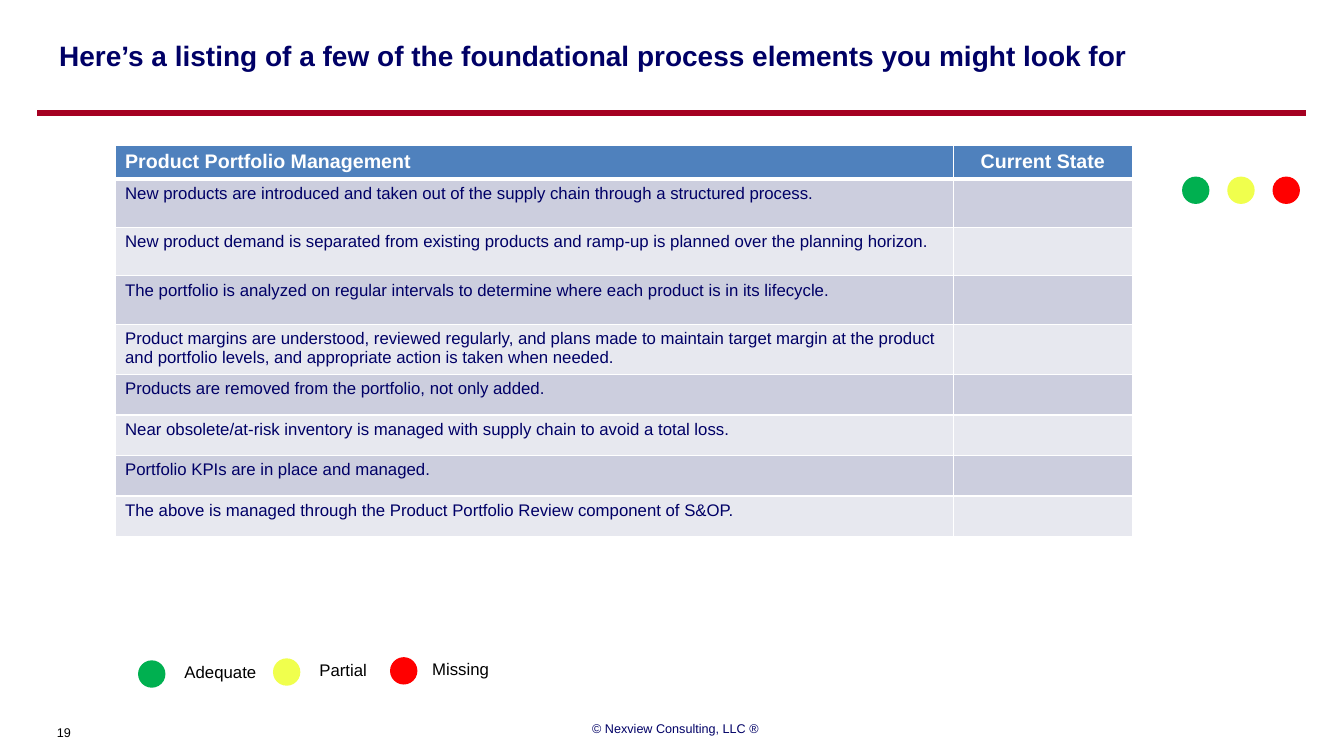
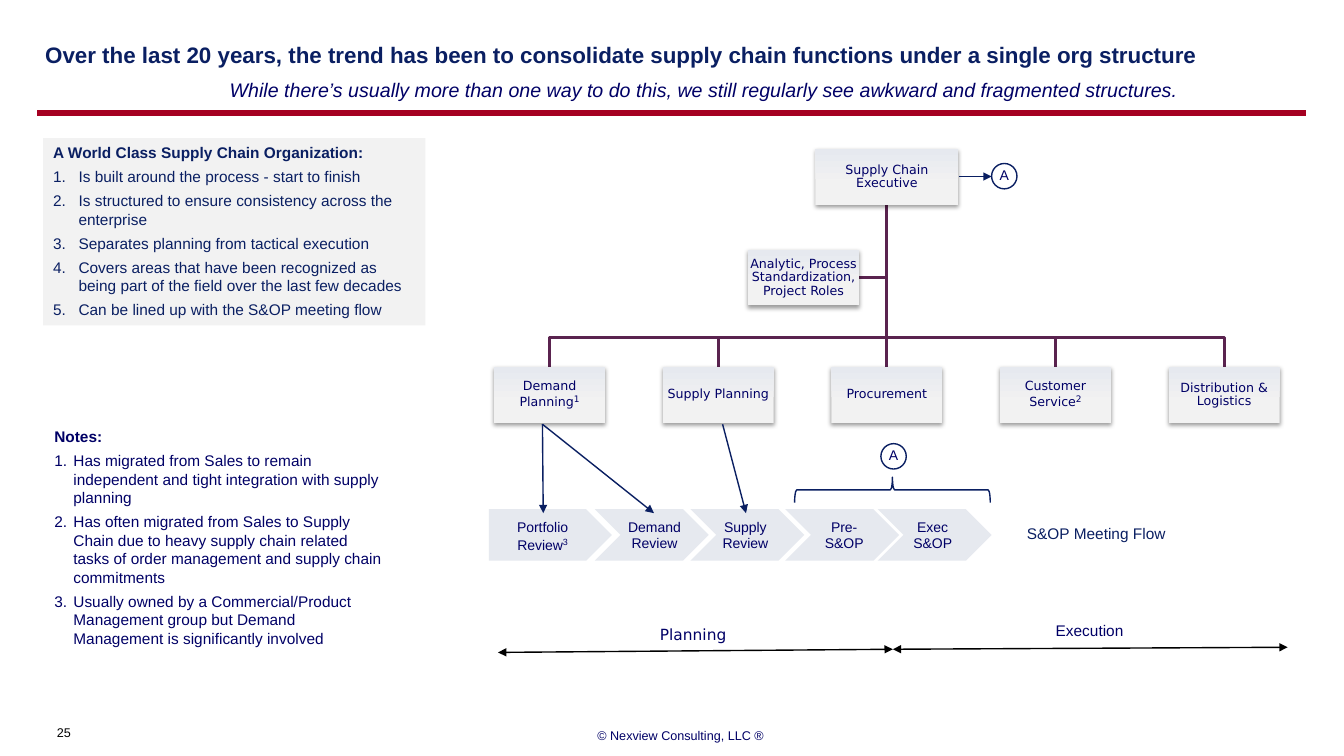
from dataclasses import dataclass

from lxml.etree import SubElement
from pptx import Presentation
from pptx.dml.color import RGBColor
from pptx.enum.shapes import MSO_CONNECTOR, MSO_SHAPE
from pptx.enum.text import MSO_ANCHOR, PP_ALIGN
from pptx.oxml.ns import qn
from pptx.util import Cm, Pt

COLORS = {
    "navy": "000066", "ink": "0A1F62", "black": "000000", "white": "FFFFFF",
    "crimson": "A50021", "plum": "5A234F", "header": "4F81BD",
    "band_dark": "CCCEDE", "band_light": "E7E8EF", "panel": "F2F2F2", "mist": "E6E9EF",
    "adequate": "00B050", "partial": "F0FF4D", "missing": "FF0000",
}
SANS = "DejaVu Sans"
BASE_FONT = {"name": "Arial", "bold": False, "italic": False}
STYLES = {
    "title": ("navy", {"size": Pt(20), "bold": True}),
    "long_title": ("ink", {"size": Pt(16), "bold": True}),
    "subtitle": ("navy", {"size": Pt(14), "italic": True}),
    "footer": ("navy", {"size": Pt(9)}),
    "page": ("black", {"size": Pt(9)}),
    "table_head": ("white", {"size": Pt(14), "bold": True}),
    "table_body": ("navy", {"size": Pt(12)}),
    "legend": ("black", {"size": Pt(12)}),
    "role": ("navy", {"size": Pt(9), "name": SANS}),
    "step": ("navy", {"size": Pt(10)}),
    "planning": ("navy", {"size": Pt(11), "name": SANS}),
    "notes": ("navy", {"size": Pt(11)}),
    "notes_head": ("navy", {"size": Pt(11), "bold": True}),
    "panel": ("ink", {"size": Pt(11)}),
    "panel_head": ("ink", {"size": Pt(11), "bold": True}),
}
DOT = 0.69
CENTER = PP_ALIGN.CENTER


@dataclass
class Box:
    """A rectangle in centimetres."""
    x: float
    y: float
    w: float
    h: float

    def inner(self, dx, dy, w, h):
        return Box(self.x + dx, self.y + dy, w, h)

    def point(self, dx, dy):
        return self.x + dx, self.y + dy

    def lengths(self):
        return Cm(self.x), Cm(self.y), Cm(self.w), Cm(self.h)


# Shared helpers
def rgb(color):
    return RGBColor.from_string(COLORS[color])


def apply(target, values):
    for name, value in values.items():
        setattr(target, name, value)


def write(paragraph, text, style, **layout):
    """Fill a paragraph; what follows ^ is superscript."""
    color, font = STYLES[style]
    apply(paragraph, layout)
    body, _, mark = text.partition("^")
    for part, raised in ((body, False), (mark, True)):
        if part:
            run = paragraph.add_run()
            run.text = part
            apply(run.font, {**BASE_FONT, **font})
            run.font.color.rgb = rgb(color)
            if raised:
                run.font.size = Pt(11)
                run.font._element.set("baseline", "30000")


def set_frame(frame, anchor=MSO_ANCHOR.TOP, inset=None):
    apply(frame, {"word_wrap": True, "vertical_anchor": anchor})
    if inset is not None:
        sides = ("left", "right", "top", "bottom")
        apply(frame, {f"margin_{side}": Cm(inset) for side in sides})


def add_text(slide, box, text, style, anchor=MSO_ANCHOR.TOP, inset=None, **layout):
    frame = slide.shapes.add_textbox(*box.lengths()).text_frame
    set_frame(frame, anchor, inset)
    for i, line in enumerate(text.split("\n")):
        paragraph = frame.add_paragraph() if i else frame.paragraphs[0]
        write(paragraph, line, style, **layout)


def add_figure(slide, kind, box, fill=None, line=None):
    figure = slide.shapes.add_shape(kind, *box.lengths())
    figure.shadow.inherit = False
    if fill:
        figure.fill.solid()
        figure.fill.fore_color.rgb = rgb(fill)
    else:
        figure.fill.background()
    if line:
        figure.line.color.rgb = rgb(line)
        figure.line.width = Pt(1)
    else:
        figure.line.fill.background()
    return figure


def add_line(slide, start, end, color, width=1, heads=()):
    ends = (Cm(value) for value in (*start, *end))
    line = slide.shapes.add_connector(MSO_CONNECTOR.STRAIGHT, *ends)
    line.line.color.rgb = rgb(color)
    line.line.width = Pt(width)
    properties = line._element.spPr
    for head in heads:
        SubElement(properties.find(qn("a:ln")), qn(f"a:{head}"), type="triangle")
    SubElement(properties, qn("a:effectLst"))


def add_dot(slide, x, y, state):
    add_figure(slide, MSO_SHAPE.OVAL, Box(x, y, DOT, DOT), state)


def add_numbered(frame, heading, items, style, indent):
    set_frame(frame)
    write(frame.paragraphs[0], heading, f"{style}_head", alignment=PP_ALIGN.LEFT)
    for item in items:
        paragraph = frame.add_paragraph()
        properties = paragraph._p.get_or_add_pPr()
        properties.set("marL", str(Cm(indent)))
        properties.set("indent", str(-Cm(indent)))
        SubElement(properties, qn("a:buAutoNum"), type="arabicPeriod")
        write(paragraph, item, style, alignment=PP_ALIGN.LEFT, space_before=Pt(4))


def start_slide(deck, title, style, title_box, page, footer_x, footer_anchor):
    slide = deck.slides.add_slide(deck.slide_layouts[6])
    add_line(slide, (0.94, 2.84), (32.92, 2.84), "crimson", 4)
    add_text(slide, Box(0.91, 18.19, 1.4, 0.61), page, "page", alignment=CENTER, line_spacing=0.9)
    add_text(slide, title_box, title, style, MSO_ANCHOR.MIDDLE)
    add_text(slide, Box(footer_x, 18.03, 10.72, 1.02), "© Nexview Consulting, LLC ®",
             "footer", footer_anchor, alignment=CENTER)
    return slide


# Process checklist slide
PRACTICES = [
    "New products are introduced and taken out of the supply chain through a structured process.",
    "New product demand is separated from existing products and ramp-up is planned over the planning horizon.",
    "The portfolio is analyzed on regular intervals to determine where each product is in its lifecycle.",
    "Product margins are understood, reviewed regularly, and plans made to maintain target margin at the "
    "product and portfolio levels, and appropriate action is taken when needed.",
    "Products are removed from the portfolio, not only added.",
    "Near obsolete/at-risk inventory is managed with supply chain to avoid a total loss.",
    "Portfolio KPIs are in place and managed.",
    "The above is managed through the Product Portfolio Review component of S&OP.",
]


def style_cell(cell, fill, top, bottom):
    cell.fill.solid()
    cell.fill.fore_color.rgb = rgb(fill)
    properties = cell._tc.get_or_add_tcPr()
    widths = {"lnL": 1, "lnR": 1, "lnT": top, "lnB": bottom}
    for i, (side, width) in enumerate(widths.items()):
        border = SubElement(properties, qn(f"a:{side}"), w=str(Pt(width)))
        SubElement(SubElement(border, qn("a:solidFill")), qn("a:srgbClr"), val=COLORS["white"])
        properties.insert(i, border)


def checklist(slide, box):
    table = slide.shapes.add_table(len(PRACTICES) + 1, 2, *box.lengths()).table
    state_width = 4.5
    for column, width in zip(table.columns, (box.w - state_width, state_width)):
        column.width = Cm(width)
    for i, row in enumerate(table.rows):
        row.height = Cm(0.82 if i == 0 else 1.22 if i < 5 else 1.02)
        fill = "header" if i == 0 else "band_dark" if i % 2 else "band_light"
        for cell in row.cells:
            style_cell(cell, fill, 3 if i == 1 else 1, 3 if i == 0 else 1)
    write(table.cell(0, 0).text_frame.paragraphs[0], "Product Portfolio Management", "table_head")
    write(table.cell(0, 1).text_frame.paragraphs[0], "Current State", "table_head", alignment=CENTER)
    for i, practice in enumerate(PRACTICES, 1):
        write(table.cell(i, 0).text_frame.paragraphs[0], practice, "table_body")


def legend(slide, box):
    items = [("Adequate", 0, 0.16, 0.92), ("Partial", 3.4, 0.11, 0.92), ("Missing", 6.35, 0.08, 0.81)]
    for label, dx, dy, gap in items:
        add_dot(slide, *box.point(dx, dy), label.lower())
        add_text(slide, box.inner(dx + gap, dy - 0.08, 2.62, 0.76), label, "legend")


def state_dots(slide, box):
    for i, state in enumerate(("adequate", "partial", "missing")):
        add_dot(slide, *box.point(i * (box.w - DOT) / 2, 0), state)


def checklist_slide(deck):
    slide = start_slide(deck, "Here’s a listing of a few of the foundational process elements you might look for",
                        "title", Box(1.24, 0.66, 31.67, 1.47), "19", 11.66, MSO_ANCHOR.TOP)
    checklist(slide, Box(2.9, 3.66, 25.63, 9.78))
    legend(slide, Box(3.48, 16.48, 10.67, 0.85))
    state_dots(slide, Box(29.79, 4.45, 2.97, DOT))


# Organization slide
FUNCTIONS = ["Demand Planning^1", "Supply Planning", "Procurement", "Customer Service^2", "Distribution & Logistics"]
# Each step: text, offset of its arrow, offset of its label
STEPS = [("Portfolio\nReview^3", 0, 0.3), ("Demand\nReview", 2.67, 3.12), ("Supply\nReview", 5.08, 5.41),
         ("Pre-S&OP", 7.47, 7.9), ("Exec S&OP", 9.8, 10.13)]
TRAITS = [
    "Is built around the process - start to finish",
    "Is structured to ensure consistency across the enterprise",
    "Separates planning from tactical execution",
    "Covers areas that have been recognized as being part of the field over the last few decades",
    "Can be lined up with the S&OP meeting flow",
]
NOTES = [
    "Has migrated from Sales to remain independent and tight integration with supply planning",
    "Has often migrated from Sales to Supply Chain due to heavy supply chain related tasks of order "
    "management and supply chain commitments",
    "Usually owned by a Commercial/Product Management group but Demand Management is significantly involved",
]


def role(slide, box, text):
    card = add_figure(slide, MSO_SHAPE.RECTANGLE, box, "panel")
    card.fill.gradient()
    card.fill.gradient_angle = 90
    for stop, color, position in zip(card.fill.gradient_stops, ("panel", "mist"), (0.35, 1)):
        stop.color.rgb = rgb(color)
        stop.position = position
    shadow = SubElement(card._element.spPr.find(qn("a:effectLst")), qn("a:outerShdw"),
                        blurRad="40000", dist="20000", dir="5400000", rotWithShape="0")
    shade = SubElement(shadow, qn("a:srgbClr"), val=COLORS["black"])
    SubElement(shade, qn("a:alpha"), val="38000")
    set_frame(card.text_frame, MSO_ANCHOR.MIDDLE, 0.03)
    write(card.text_frame.paragraphs[0], text, "role", alignment=CENTER, line_spacing=0.9)


def branch(slide, points):
    start, *rest = [(Cm(x), Cm(y)) for x, y in points]
    builder = slide.shapes.build_freeform(*start)
    builder.add_line_segments(rest, close=False)
    path = builder.convert_to_shape()
    path.shadow.inherit = False
    path.fill.background()
    path.line.color.rgb = rgb("plum")
    path.line.width = Pt(2)


def org_chart(slide, box):
    card_w, card_h, bus = 2.8, 1.4, 4.75
    trunk, row = box.w / 2, box.h - card_h
    pitch = (box.w - card_w) / (len(FUNCTIONS) - 1)
    top = box.point(trunk, card_h)
    # Reporting lines
    branch(slide, [top, box.point(trunk, 3.24), box.point(9.2, 3.24)])
    add_line(slide, top, box.point(trunk, row), "plum", 2)
    for i in (0, 1, 3, 4):
        center = i * pitch + card_w / 2
        branch(slide, [top, box.point(trunk, bus), box.point(center, bus), box.point(center, row)])
    # Roles
    role(slide, box.inner(trunk - 1.8, 0, 3.6, card_h), "Supply Chain Executive")
    role(slide, box.inner(6.4, 2.54, card_w, card_h), "Analytic, Process Standardization, Project Roles")
    for i, function in enumerate(FUNCTIONS):
        role(slide, box.inner(i * pitch, row, card_w, card_h), function)
    # Link from the executive to the meetings marked A
    add_line(slide, box.point(11.73, 0.69), box.point(12.54, 0.69), "ink", heads=["tailEnd"])
    marker(slide, box.inner(12.54, 0.36, 0.64, 0.64))


def marker(slide, box):
    circle = add_figure(slide, MSO_SHAPE.OVAL, box, line="ink")
    set_frame(circle.text_frame, MSO_ANCHOR.MIDDLE, 0)
    circle.text_frame.word_wrap = False
    write(circle.text_frame.paragraphs[0], "A", "step", alignment=CENTER, line_spacing=0.9)


def meeting_flow(slide, box):
    for i, (text, dx, label_dx) in enumerate(STEPS):
        kind, width = (MSO_SHAPE.CHEVRON, 2.87) if i else (MSO_SHAPE.PENTAGON, 3.1)
        add_figure(slide, kind, box.inner(dx, 0, width, box.h), "mist")
        add_text(slide, box.inner(label_dx, 0.1, 2.11, 1.12), text, "step", alignment=CENTER)
    # Functions feeding the meetings
    for start, end in ((1.35, 4.16), (5.89, 6.48), (1.35, 1.37)):
        add_line(slide, box.point(start, -2.14), box.point(end, 0.1), "ink", heads=["tailEnd"])
    marker(slide, box.inner(9.88, -1.65, 0.64, 0.64))
    brace = add_figure(slide, MSO_SHAPE.LEFT_BRACE, box.inner(9.85, -2.95, 0.64, 4.93), line="ink")
    brace.rotation = 90
    add_text(slide, box.inner(13.31, 0.25, 5.28, 0.74), "S&OP Meeting Flow", "panel")


def horizon(slide, box):
    middle = box.w / 2
    spans = [("Planning", "planning", 0, 0.79, 0.71, 3.27, 0.1),
             ("Execution", "notes", middle, 0.71, 0.66, 3.31, 0)]
    for label, style, dx, start_dy, end_dy, label_dx, label_dy in spans:
        add_line(slide, box.point(dx, start_dy), box.point(dx + middle, end_dy), "black",
                 heads=["headEnd", "tailEnd"])
        add_text(slide, box.inner(dx + label_dx, label_dy, 3.3, 0.48), label, style, inset=0, alignment=CENTER)


def organization_slide(deck):
    slide = start_slide(deck, "Over the last 20 years, the trend has been to consolidate supply chain functions "
                        "under a single org structure", "long_title", Box(0.89, 0.64, 32.44, 1.47),
                        "25", 11.79, MSO_ANCHOR.MIDDLE)
    add_text(slide, Box(5.54, 1.85, 27.76, 0.86), "While there’s usually more than one way to do this, "
             "we still regularly see awkward and fragmented structures.", "subtitle")
    horizon(slide, Box(12.55, 15.65, 19.9, 0.9))
    org_chart(slide, Box(12.45, 3.76, 19.8, 6.89))
    meeting_flow(slide, Box(12.32, 12.83, 12.67, 1.3))
    notes = slide.shapes.add_textbox(*Box(1.12, 10.64, 8.86, 5.87).lengths())
    add_numbered(notes.text_frame, "Notes:", NOTES, "notes", 0.48)
    traits = add_figure(slide, MSO_SHAPE.RECTANGLE, Box(1.09, 3.48, 9.63, 4.72), "panel")
    add_numbered(traits.text_frame, "A World Class Supply Chain Organization:", TRAITS, "panel", 0.64)


def main():
    deck = Presentation()
    apply(deck, {"slide_width": Cm(33.87), "slide_height": Cm(19.05)})
    checklist_slide(deck)
    organization_slide(deck)
    deck.save("out.pptx")


if __name__ == "__main__":
    main()
